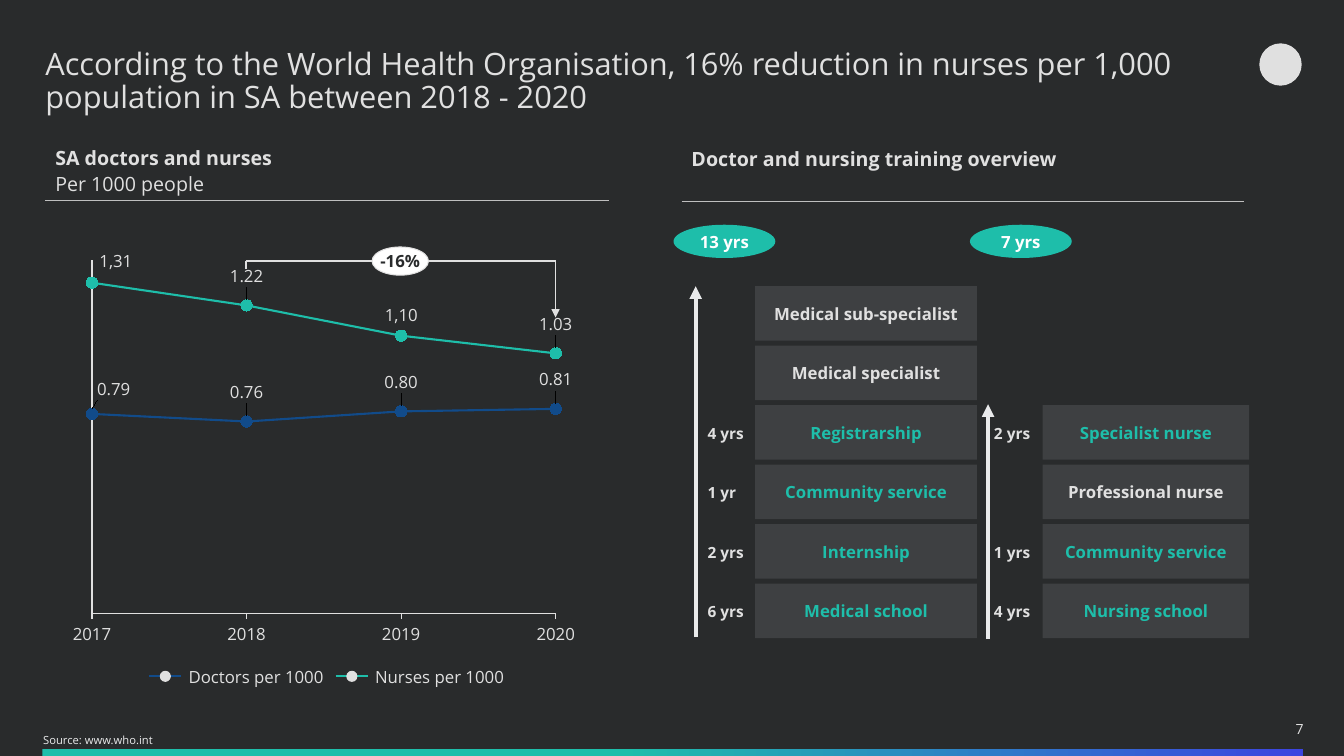
"""Build the slide on doctors and nurses per 1,000 people and their training paths."""
from dataclasses import dataclass
from typing import Optional

from lxml.etree import SubElement
from pptx import Presentation
from pptx.chart.data import XyChartData
from pptx.dml.color import RGBColor
from pptx.enum.chart import XL_CHART_TYPE, XL_LABEL_POSITION, XL_MARKER_STYLE
from pptx.enum.chart import XL_TICK_LABEL_POSITION as TickLabels, XL_TICK_MARK as TickMark
from pptx.enum.shapes import MSO_CONNECTOR, MSO_SHAPE as Preset
from pptx.enum.text import MSO_ANCHOR as Anchor, PP_ALIGN as Align
from pptx.oxml import parse_xml
from pptx.oxml.ns import nsdecls, qn
from pptx.util import Inches, Pt

FONT = "Open Sans"
DARK, LIGHT, PALE, WHITE = "292B2C", "E0E0E0", "E9EAEB", "FFFFFF"
TEAL, BLUE, BOX, RULE = "1EBEAA", "114B8A", "3E4042", "BFBFBF"
ROW_TOP, ROW_PITCH, ROW_HEIGHT = 2.84, 0.59, 0.54


@dataclass
class Item:
    left: float
    top: float
    width: float
    height: float
    text: str = ""
    size: float = 12
    color: str = LIGHT
    bold: bool = False
    align: Align = Align.LEFT
    anchor: Anchor = Anchor.TOP
    inset: tuple = (0.1, 0.05)
    spacing: float = 1.0
    wrap: bool = True
    preset: Optional[Preset] = None
    fill: str = DARK
    outline: Optional[str] = None


@dataclass
class Line:
    start: tuple
    end: tuple
    color: str = LIGHT
    weight: float = 1
    arrow: bool = False


@dataclass
class Step:
    text: str
    years: str = ""
    color: str = TEAL


@dataclass
class Pathway:
    box_left: float
    box_width: float
    years_left: float
    first_row: int
    steps: list


@dataclass
class Trend:
    name: str
    color: str
    values: list
    labels: dict


YEARS = [2017, 2018, 2019, 2020]
TRENDS = [
    Trend("Doctors per 1000", BLUE, [0.79, 0.76, 0.80, 0.81],
          {0: (0.04, -0.01), 1: (0, -0.02), 2: (0, -0.02), 3: (0, -0.02)}),
    Trend("Nurses per 1000", TEAL, [1.31, 1.22, 1.10, 1.03], {1: (0, -0.02), 3: (0, -0.02)}),
]
PATHWAYS = [
    Pathway(7.49, 2.2, 6.92, 0, [
        Step("Medical sub-specialist", color=LIGHT), Step("Medical specialist", color=LIGHT),
        Step("Registrarship", "4 yrs"), Step("Community service", "1 yr"),
        Step("Internship", "2 yrs"), Step("Medical school", "6 yrs")]),
    Pathway(10.34, 2.05, 9.76, 2, [
        Step("Specialist nurse", "2 yrs"), Step("Professional nurse", color=LIGHT),
        Step("Community service", "1 yrs"), Step("Nursing school", "4 yrs")]),
]
CENTERED = dict(align=Align.CENTER, anchor=Anchor.MIDDLE)
VALUE_TAG = dict(align=Align.CENTER, anchor=Anchor.BOTTOM, inset=(0.02, 0), wrap=False,
                 preset=Preset.RECTANGLE)


def rgb(color: str) -> RGBColor:
    return RGBColor.from_string(color)


def style_font(font, size: float, color: str, bold: bool = False) -> None:
    font.name, font.size, font.bold = FONT, Pt(size), bold
    font.color.rgb = rgb(color)


def draw_item(slide, item: Item):
    frame = [Inches(value) for value in (item.left, item.top, item.width, item.height)]
    if item.preset is None:
        shape = slide.shapes.add_textbox(*frame)
    else:
        shape = slide.shapes.add_shape(item.preset, *frame)
        shape.shadow.inherit = False
        shape.fill.solid()
        shape.fill.fore_color.rgb = rgb(item.fill)
        if item.outline:
            shape.line.color.rgb = rgb(item.outline)
            shape.line.width = Pt(0.75)
        else:
            shape.line.fill.background()
    text_frame = shape.text_frame
    text_frame.word_wrap, text_frame.vertical_anchor = item.wrap, item.anchor
    text_frame.margin_left = text_frame.margin_right = Inches(item.inset[0])
    text_frame.margin_top = text_frame.margin_bottom = Inches(item.inset[1])
    text_frame.text = item.text
    for paragraph in text_frame.paragraphs:
        paragraph.alignment, paragraph.line_spacing = item.align, item.spacing
        for run in paragraph.runs:
            style_font(run.font, item.size, item.color, item.bold)
    return shape


def draw_line(slide, line: Line) -> None:
    ends = [Inches(value) for value in line.start + line.end]
    connector = slide.shapes.add_connector(MSO_CONNECTOR.STRAIGHT, *ends)
    connector.line.color.rgb = rgb(line.color)
    connector.line.width = Pt(line.weight)
    if line.arrow:
        SubElement(connector.line._get_or_add_ln(), qn("a:tailEnd"), type="triangle")
    SubElement(connector._element.spPr, qn("a:effectLst"))


def manual_layout(inner: bool = False, **values: float):
    target = '<c:layoutTarget val="inner"/><c:xMode val="edge"/><c:yMode val="edge"/>' if inner else ""
    parts = "".join(f'<c:{key} val="{value}"/>' for key, value in values.items())
    return parse_xml(f'<c:layout {nsdecls("c")}><c:manualLayout>{target}{parts}'
                     '</c:manualLayout></c:layout>')


def style_trend(series, trend: Trend) -> None:
    series.smooth = False
    series.format.line.color.rgb = rgb(trend.color)
    series.format.line.width = Pt(1.5)
    series.marker.style, series.marker.size = XL_MARKER_STYLE.CIRCLE, 8
    series.marker.format.fill.solid()
    series.marker.format.fill.fore_color.rgb = rgb(trend.color)
    series.marker.format.line.color.rgb = rgb(trend.color)
    for index in trend.labels:
        label = series.points[index].data_label
        style_font(label.font, 12, LIGHT)
        label.position = XL_LABEL_POSITION.ABOVE
    for element, (x, y) in zip(series._element.xpath("c:dLbls/c:dLbl"), trend.labels.values()):
        element.insert(1, manual_layout(x=x, y=y))
        element.insert(2, parse_xml(
            f'<c:numFmt {nsdecls("c")} formatCode="0.00" sourceLinked="0"/>'))
    for element in series._element.xpath("c:dLbls/c:showVal"):
        element.set("val", "0")


def draw_chart(slide) -> None:
    data = XyChartData(number_format="0.00")
    for trend in TRENDS:
        series = data.add_series(trend.name)
        for year, value in zip(YEARS, trend.values):
            series.add_data_point(year, value)
    chart = slide.shapes.add_chart(XL_CHART_TYPE.XY_SCATTER_LINES, Inches(0.52), Inches(2.49),
                                   Inches(5.38), Inches(4.08), data).chart
    chart.has_title = chart.has_legend = False
    style_font(chart.font, 12, LIGHT)
    chart.plots[0].vary_by_categories = False
    for axis, low, high, unit in ((chart.category_axis, 2017, 2020, 1),
                                  (chart.value_axis, 0, 1.4, 0.2)):
        axis.minimum_scale, axis.maximum_scale, axis.major_unit = low, high, unit
        axis.has_major_gridlines = False
        axis.major_tick_mark = axis.minor_tick_mark = TickMark.NONE
        axis.format.line.color.rgb = rgb(LIGHT)
        axis.format.line.width = Pt(0.75)
    chart.category_axis.major_tick_mark = TickMark.OUTSIDE
    chart.category_axis.tick_labels.number_format = "0"
    chart.category_axis.tick_labels.number_format_is_linked = False
    style_font(chart.category_axis.tick_labels.font, 12, LIGHT)
    chart.value_axis.tick_label_position = TickLabels.NONE
    plot_area = chart._chartSpace.chart.plotArea
    for layout in plot_area.findall(qn("c:layout")):
        plot_area.remove(layout)
    plot_area.insert(0, manual_layout(True, x=0.073, y=0.022, w=0.855, h=0.859))
    for series, trend in zip(chart.plots[0].series, TRENDS):
        style_trend(series, trend)


def draw_frame(slide) -> None:
    slide.background.fill.solid()
    slide.background.fill.fore_color.rgb = rgb(DARK)
    title = slide.shapes.title
    title.left, title.top, title.width, title.height = map(Inches, (0.45, 0.44, 11.95, 0.54))
    text_frame = title.text_frame
    text_frame.text = ("According to the World Health Organisation, 16% reduction in nurses "
                       "per 1,000 population in SA between 2018 - 2020")
    text_frame.word_wrap, text_frame.vertical_anchor = True, Anchor.TOP
    text_frame.margin_left = text_frame.margin_right = text_frame.margin_bottom = 0
    text_frame.margin_top = Inches(0.04)
    paragraph = text_frame.paragraphs[0]
    paragraph.alignment, paragraph.line_spacing = Align.LEFT, 0.9
    style_font(paragraph.runs[0].font, 22, LIGHT)
    draw_item(slide, Item(12.62, 7.15, 0.31, 0.17, "7", 10, align=Align.RIGHT, inset=(0, 0)))
    draw_item(slide, Item(12.49, 0.43, 0.42, 0.42, preset=Preset.OVAL, fill=LIGHT))
    bar = draw_item(slide, Item(0.42, 7.43, 12.5, 0.08, preset=Preset.RECTANGLE))
    bar.fill.gradient()
    bar.fill.gradient_angle = 0
    for stop, position, color in zip(bar.fill.gradient_stops, (0.46, 1), (TEAL, "3C45E0")):
        stop.position, stop.color.rgb = position, rgb(color)
    draw_item(slide, Item(0.33, 7.21, 1.3, 0.24, "Source: www.who.int", 8, PALE,
                          spacing=1.1, wrap=False))


def draw_trends(slide) -> None:
    draw_chart(slide)
    draw_line(slide, Line((2.44, 2.67), (2.44, 2.59)))
    draw_line(slide, Line((2.44, 2.59), (5.51, 2.59)))
    draw_line(slide, Line((5.51, 2.59), (5.51, 3.15), arrow=True))
    draw_item(slide, Item(3.79, 3.02, 0.38, 0.2, "1,10", **VALUE_TAG))
    draw_item(slide, Item(0.96, 2.49, 0.38, 0.2, "1,31", **VALUE_TAG))
    draw_item(slide, Item(3.69, 2.45, 0.56, 0.28, "-16%", color=DARK, bold=True, inset=(0, 0),
                          wrap=False, preset=Preset.OVAL, fill=WHITE, outline=LIGHT, **CENTERED))
    for left, trend in zip((1.48, 3.33), TRENDS):
        draw_line(slide, Line((left, 6.71), (left + 0.32, 6.71), trend.color, 1.5))
        draw_item(slide, Item(left + 0.11, 6.66, 0.1, 0.1, preset=Preset.OVAL, fill=LIGHT,
                              outline=LIGHT))
        draw_item(slide, Item(left + 0.39, 6.61, 1.34, 0.2, trend.name, anchor=Anchor.MIDDLE,
                              inset=(0, 0), wrap=False))
    draw_line(slide, Line((0.45, 1.99), (6.04, 1.99), RULE, 0.5))
    heading = draw_item(slide, Item(0.45, 1.38, 5.59, 0.6, "SA doctors and nurses\nPer 1000 people",
                                    14, bold=True, spacing=1.1))
    heading.text_frame.paragraphs[1].runs[0].font.bold = False


def draw_training(slide) -> None:
    draw_line(slide, Line((6.76, 2), (12.34, 2), RULE, 0.5))
    draw_item(slide, Item(6.76, 1.38, 5.59, 0.35, "Doctor and nursing training overview", 14,
                          bold=True, spacing=1.1))
    for pathway in PATHWAYS:
        for row, step in enumerate(pathway.steps, pathway.first_row):
            top = ROW_TOP + row * ROW_PITCH
            draw_item(slide, Item(pathway.box_left, top, pathway.box_width, ROW_HEIGHT, step.text,
                                  color=step.color, bold=True, preset=Preset.RECTANGLE, fill=BOX,
                                  **CENTERED))
            if step.years:
                draw_item(slide, Item(pathway.years_left, top + 0.12, 0.58, 0.29, step.years, 11,
                                      bold=True, spacing=1.1))
    for left, total in ((6.68, "13 yrs"), (9.62, "7 yrs")):
        draw_item(slide, Item(left, 2.23, 1.01, 0.33, total, color=WHITE, bold=True, inset=(0, 0),
                              preset=Preset.OVAL, fill=TEAL, **CENTERED))
    draw_line(slide, Line((6.9, 6.32), (6.9, 2.84), PALE, 3, True))
    draw_line(slide, Line((9.8, 6.34), (9.8, 4.01), PALE, 3, True))


def main() -> None:
    presentation = Presentation()
    presentation.slide_width, presentation.slide_height = Inches(13.33), Inches(7.5)
    slide = presentation.slides.add_slide(presentation.slide_layouts[5])
    draw_frame(slide)
    draw_trends(slide)
    draw_training(slide)
    presentation.save("out.pptx")


if __name__ == "__main__":
    main()
